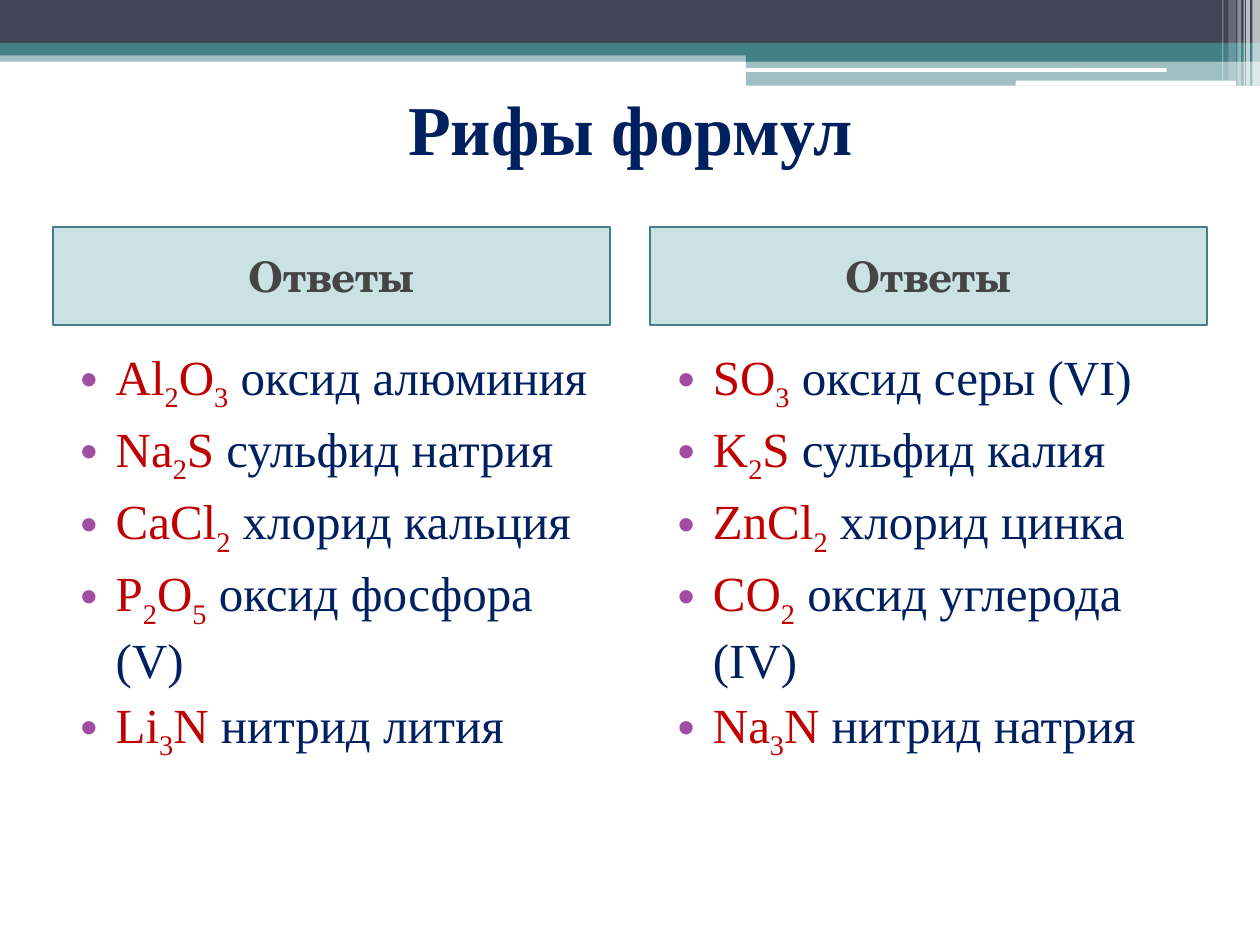
import dataclasses
import itertools

import pptx
import pptx.dml.color
import pptx.enum.shapes
import pptx.enum.text
import pptx.oxml
import pptx.oxml.ns
import pptx.util

SLIDE_WIDTH = pptx.util.Inches(10)
SLIDE_HEIGHT = pptx.util.Inches(7.5)
COLUMNS, ROWS = 100, 75

COLORS = {
    "dark": "424456",
    "teal": "438086",
    "header": "328E97",
    "header text": "454545",
    "white": "FFFFFF",
    "navy": "002060",
    "red": "C00000",
    "bullet": "A04DA3",
}
SERIF = "Times New Roman"
HEADER_FONT = "TeX Gyre Schola"
COLUMN_WIDTH = 44.2


@dataclasses.dataclass(frozen=True)
class Area:
    """A rectangle in grid columns and rows."""
    column: float
    row: float
    width: float
    height: float

    def box(self) -> tuple[int, int, int, int]:
        column, row = SLIDE_WIDTH / COLUMNS, SLIDE_HEIGHT / ROWS
        return (round(self.column * column), round(self.row * row),
                round(self.width * column), round(self.height * row))


@dataclasses.dataclass(frozen=True)
class Band:
    area: Area
    color: str
    opacity: int = 100
    rounded: bool = False


@dataclasses.dataclass(frozen=True)
class Compound:
    formula: str
    name: str


@dataclasses.dataclass(frozen=True)
class AnswerColumn:
    left: float
    compounds: tuple[Compound, ...]


BANDS = (
    Band(Area(0, 4, 100, 0.9), "teal", 50),
    Band(Area(0, 0, 100, 3.4), "dark"),
    Band(Area(0, 3.4, 100, 1), "teal"),
    Band(Area(59.2, 3.9, 40.8, 1), "teal"),
    Band(Area(59.2, 4.8, 40.8, 2), "teal", 50),
    Band(Area(59.1, 5.4, 33.5, 0.3), "white", rounded=True),
    Band(Area(80.6, 6.4, 17.5, 0.4), "white", rounded=True),
    Band(Area(99.4, 0, 0.6, 6.8), "white", 65),
    Band(Area(98.9, 0, 0.3, 6.8), "white", 65),
    Band(Area(98.7, 0, 0.1, 6.8), "white", 60),
    Band(Area(98.2, 0, 0.3, 6.8), "white", 40),
    Band(Area(97.5, 0, 0.6, 6.4), "white", 20),
    Band(Area(97, 0, 0.1, 6.4), "white", 30),
)

ANSWERS = (
    AnswerColumn(4.2, (
        Compound("Al2O3", "оксид алюминия"),
        Compound("Na2S", "сульфид натрия"),
        Compound("CaCl2", "хлорид кальция"),
        Compound("P2O5", "оксид фосфора (V)"),
        Compound("Li3N", "нитрид лития"),
    )),
    AnswerColumn(51.6, (
        Compound("SO3", "оксид серы (VI)"),
        Compound("K2S", "сульфид калия"),
        Compound("ZnCl2", "хлорид цинка"),
        Compound("CO2", "оксид углерода (IV)"),
        Compound("Na3N", "нитрид натрия"),
    )),
)


def rgb(color: str) -> pptx.dml.color.RGBColor:
    return pptx.dml.color.RGBColor.from_string(COLORS[color])


def draw_band(slide, band: Band):
    kinds = pptx.enum.shapes.MSO_SHAPE
    kind = kinds.ROUNDED_RECTANGLE if band.rounded else kinds.RECTANGLE
    shape = slide.shapes.add_shape(kind, *band.area.box())
    shape.shadow.inherit = False
    shape.line.fill.background()
    shape.fill.solid()
    shape.fill.fore_color.rgb = rgb(band.color)
    if band.opacity < 100:
        color = shape.fill._xPr.find(".//" + pptx.oxml.ns.qn("a:srgbClr"))
        color.append(pptx.oxml.parse_xml(
            f'<a:alpha {pptx.oxml.ns.nsdecls("a")} val="{band.opacity * 1000}"/>'))
    return shape


def style_font(font, size: float, name: str, color: str, bold: bool = False) -> None:
    font.size = pptx.util.Pt(size)
    font.name = name
    font.bold = bold
    font.color.rgb = rgb(color)


def write_centered(shape, text: str, size: float, name: str, color: str) -> None:
    frame = shape.text_frame
    frame.word_wrap = True
    frame.vertical_anchor = pptx.enum.text.MSO_ANCHOR.MIDDLE
    frame.text = text
    paragraph = frame.paragraphs[0]
    paragraph.alignment = pptx.enum.text.PP_ALIGN.CENTER
    style_font(paragraph.runs[0].font, size, name, color, bold=True)


def add_bullet(paragraph) -> None:
    properties = paragraph._p.get_or_add_pPr()
    properties.set("marL", str(pptx.util.Inches(0.4)))
    properties.set("indent", str(pptx.util.Inches(-0.28)))
    namespace = pptx.oxml.ns.nsdecls("a")
    for element in (
        f'<a:buClr {namespace}><a:srgbClr val="{COLORS["bullet"]}"/></a:buClr>',
        f'<a:buFont {namespace} typeface="Arial"/>',
        f'<a:buChar {namespace} char="•"/>',
    ):
        properties.append(pptx.oxml.parse_xml(element))


def write_compound(paragraph, compound: Compound) -> None:
    """Write the formula with its digits lowered, then the name."""
    add_bullet(paragraph)
    for is_index, letters in itertools.groupby(compound.formula, str.isdigit):
        run = paragraph.add_run()
        run.text = "".join(letters)
        style_font(run.font, 28, SERIF, "red")
        if is_index:
            run._r.get_or_add_rPr().set("baseline", "-25000")
    run = paragraph.add_run()
    run.text = " " + compound.name
    style_font(run.font, 28, SERIF, "navy")


def draw_answers(slide, answers: AnswerColumn) -> None:
    header = draw_band(
        slide, Band(Area(answers.left, 18, COLUMN_WIDTH, 7.8), "header", 25))
    header.line.color.rgb = rgb("teal")
    header.line.width = pptx.util.Pt(1)
    write_centered(header, "Ответы", 24, HEADER_FONT, "header text")

    area = Area(answers.left, 26.6, COLUMN_WIDTH, 45.6)
    frame = slide.shapes.add_textbox(*area.box()).text_frame
    frame.word_wrap = True
    frame.margin_top = pptx.util.Inches(0.09)
    for index, compound in enumerate(answers.compounds):
        paragraph = frame.add_paragraph() if index else frame.paragraphs[0]
        if index:
            paragraph.space_before = pptx.util.Pt(3)
        write_compound(paragraph, compound)


def main() -> None:
    presentation = pptx.Presentation()
    presentation.slide_width = SLIDE_WIDTH
    presentation.slide_height = SLIDE_HEIGHT
    slide = presentation.slides.add_slide(presentation.slide_layouts[6])
    for band in BANDS:
        draw_band(slide, band)
    title = slide.shapes.add_textbox(*Area(4.2, 7, 91.7, 6.3).box())
    write_centered(title, "Рифы формул", 40, SERIF, "navy")
    for answers in ANSWERS:
        draw_answers(slide, answers)
    presentation.save("out.pptx")


if __name__ == "__main__":
    main()
